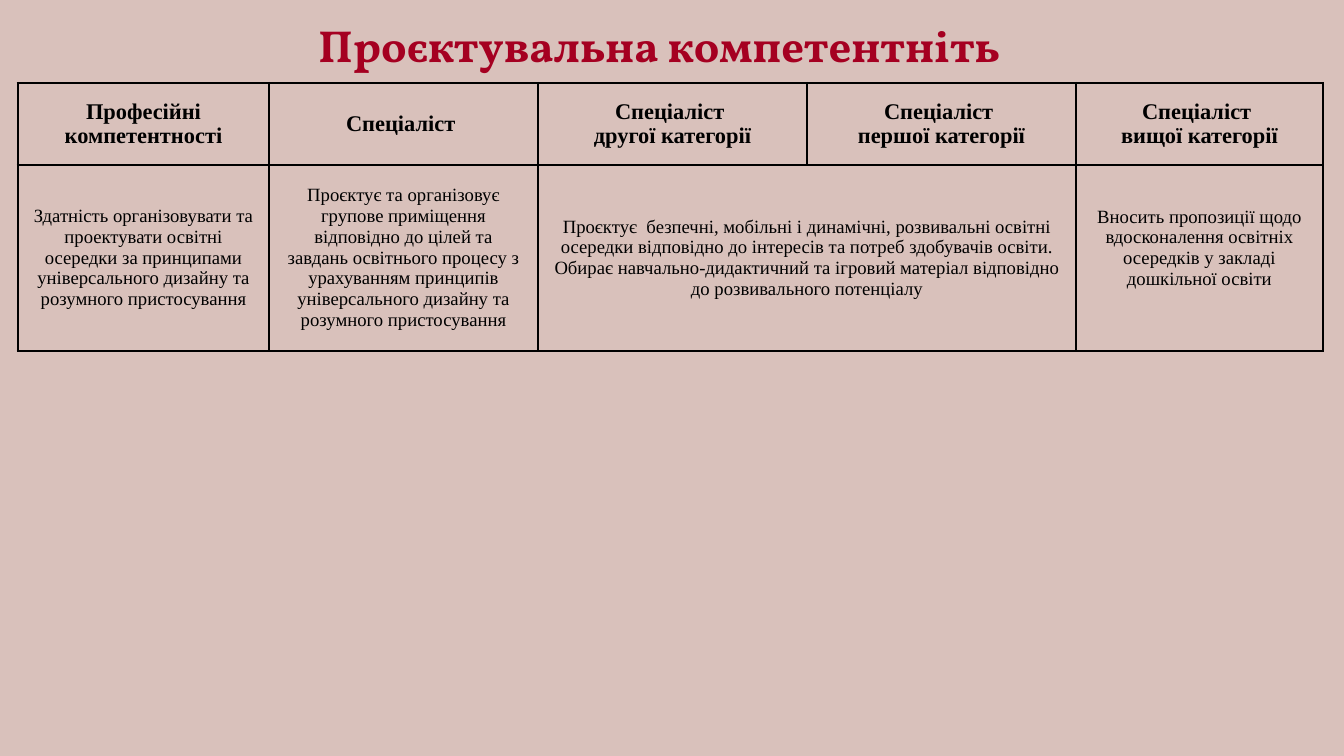
import pptx
import pptx.dml.color
import pptx.enum.text
import pptx.oxml
import pptx.oxml.ns
import pptx.util

EMU_PER_PX = 914400 / 67.2
BACKGROUND = pptx.dml.color.RGBColor(0xD9, 0xC1, 0xBB)
CRIMSON = pptx.dml.color.RGBColor(0xA5, 0x00, 0x21)
BLACK = pptx.dml.color.RGBColor(0x00, 0x00, 0x00)

COLUMN_WIDTHS = [251, 269, 269, 269, 247]
ROW_HEIGHTS = [81, 186]
CELL_MARGIN = 14
EXTRA_BOTTOM = 20
BORDER_POINTS = 3

HEADERS = [
    "Професійні компетентності",
    "Спеціаліст ",
    "Спеціаліст \nдругої категорії",
    "Спеціаліст \nпершої категорії",
    "Спеціаліст \nвищої категорії",
]
# Column index -> description; the one in column 2 also spans column 3.
DESCRIPTIONS = {
    0: "Здатність організовувати та проектувати освітні осередки за принципами "
       "універсального дизайну та розумного пристосування",
    1: "Проєктує та організовує групове приміщення відповідно до цілей та завдань "
       "освітнього процесу з урахуванням принципів універсального дизайну та "
       "розумного пристосування",
    2: "Проєктує  безпечні, мобільні і динамічні, розвивальні освітні осередки "
       "відповідно до інтересів та потреб здобувачів освіти. Обирає "
       "навчально-дидактичний та ігровий матеріал відповідно до розвивального "
       "потенціалу",
    4: "Вносить пропозиції щодо вдосконалення освітніх осередків у закладі "
       "дошкільної освіти",
}


def px(length):
    return pptx.util.Emu(round(length * EMU_PER_PX))


def format_paragraphs(text_frame, font_name, size, color, bold):
    for paragraph in text_frame.paragraphs:
        paragraph.alignment = pptx.enum.text.PP_ALIGN.CENTER
        paragraph.font.name = font_name
        paragraph.font.size = pptx.util.Pt(size)
        paragraph.font.color.rgb = color
        paragraph.font.bold = bold


def add_title(slide, text):
    title = slide.shapes.title
    title.left, title.top, title.width, title.height = px(66), px(12), px(1187), px(60)
    text_frame = title.text_frame
    text_frame.text = text
    text_frame.word_wrap = True
    text_frame.auto_size = pptx.enum.text.MSO_AUTO_SIZE.SHAPE_TO_FIT_TEXT
    text_frame.vertical_anchor = pptx.enum.text.MSO_ANCHOR.TOP
    text_frame.margin_left = text_frame.margin_right = 0
    text_frame.margin_top = text_frame.margin_bottom = 0
    format_paragraphs(text_frame, "Vollkorn", 48, CRIMSON, True)
    text_frame.paragraphs[0].line_spacing = 1.1


def set_borders(cell):
    """Draw all four sides; lines must precede the fill in the cell properties."""
    properties = cell._tc.get_or_add_tcPr()
    for index, side in enumerate(("lnL", "lnR", "lnT", "lnB")):
        line = pptx.oxml.parse_xml(
            f'<a:{side} {pptx.oxml.ns.nsdecls("a")} w="{pptx.util.Pt(BORDER_POINTS)}">'
            f'<a:solidFill><a:srgbClr val="{BLACK}"/></a:solidFill></a:{side}>'
        )
        properties.insert(index, line)


def fill_cell(cell, text, size, bold):
    cell.text = text
    cell.vertical_anchor = pptx.enum.text.MSO_ANCHOR.MIDDLE
    format_paragraphs(cell.text_frame, "Times New Roman", size, BLACK, bold)


def add_competence_table(slide):
    table = slide.shapes.add_table(
        len(ROW_HEIGHTS), len(COLUMN_WIDTHS), px(18), px(83),
        px(sum(COLUMN_WIDTHS)), px(sum(ROW_HEIGHTS)),
    ).table
    table.first_row = table.horz_banding = False
    for column, width in zip(table.columns, COLUMN_WIDTHS):
        column.width = px(width)
    for row, height in zip(table.rows, ROW_HEIGHTS):
        row.height = px(height)
    for cell in table.iter_cells():
        cell.fill.background()
        cell.margin_left = cell.margin_right = px(CELL_MARGIN)
        cell.margin_top = cell.margin_bottom = px(CELL_MARGIN)
        set_borders(cell)

    table.cell(1, 2).merge(table.cell(1, 3))
    for column, text in enumerate(HEADERS):
        fill_cell(table.cell(0, column), text, 24, True)
    for column, text in DESCRIPTIONS.items():
        fill_cell(table.cell(1, column), text, 20, False)
    table.cell(1, 4).margin_bottom = px(CELL_MARGIN + EXTRA_BOTTOM)


def main():
    presentation = pptx.Presentation()
    presentation.slide_width = px(1344)
    presentation.slide_height = px(756)
    slide = presentation.slides.add_slide(presentation.slide_layouts[5])
    slide.background.fill.solid()
    slide.background.fill.fore_color.rgb = BACKGROUND
    add_competence_table(slide)
    add_title(slide, "Проєктувальна компетентніть")
    presentation.save("out.pptx")


if __name__ == "__main__":
    main()
